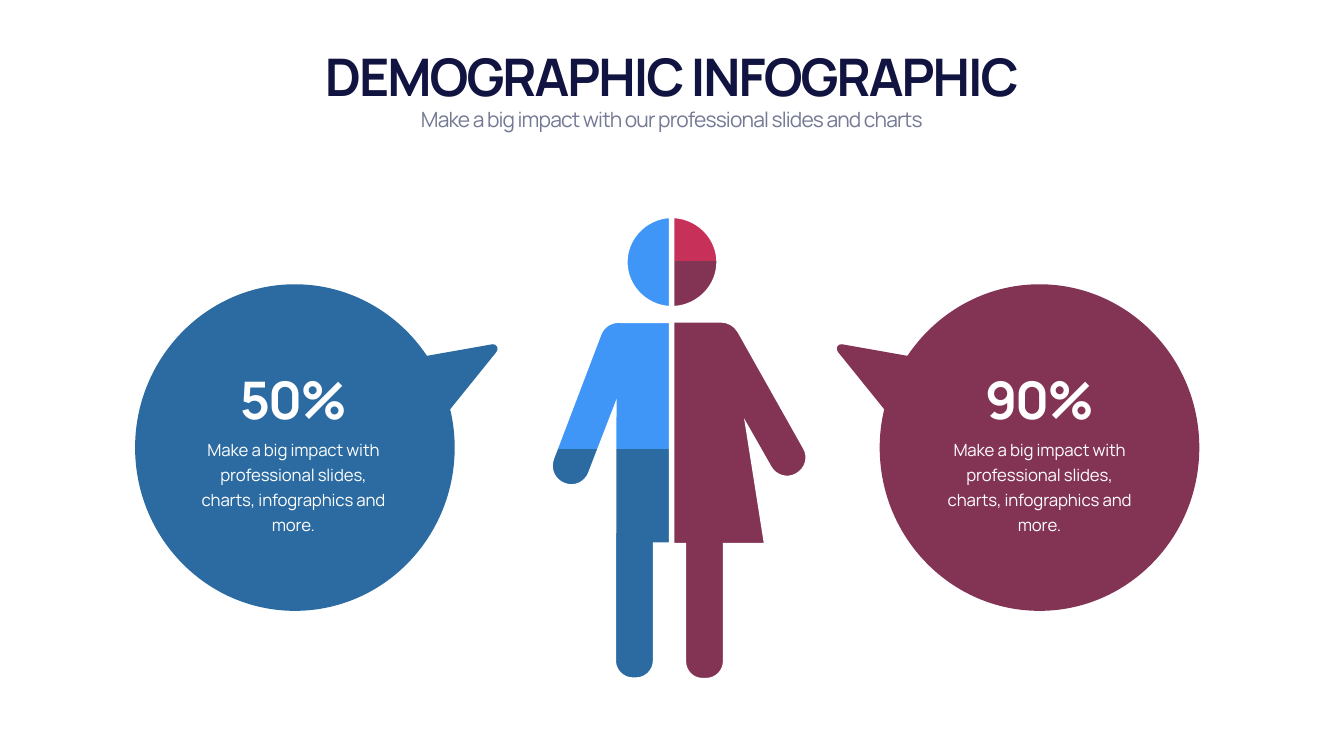
"""Build the demographic infographic slide: two speech bubbles around a split figure."""
from lxml import etree
from pptx import Presentation
from pptx.chart.data import CategoryChartData
from pptx.dml.color import RGBColor
from pptx.enum.chart import XL_CHART_TYPE
from pptx.enum.text import MSO_ANCHOR, MSO_AUTO_SIZE, PP_ALIGN
from pptx.oxml.ns import qn
from pptx.util import Inches, Pt

STACKED = XL_CHART_TYPE.COLUMN_STACKED_100
TOP, BOTTOM = MSO_ANCHOR.TOP, MSO_ANCHOR.BOTTOM
GROW = MSO_AUTO_SIZE.SHAPE_TO_FIT_TEXT
CENTER = PP_ALIGN.CENTER

FONT = "Manrope"
COLORS = {
    "navy": "111340", "gray": "747994", "white": "FFFFFF", "blue": "2B6BA1",
    "sky": "3F96F7", "plum": "833455", "red": "C73059",
}

TITLE = "DEMOGRAPHIC INFOGRAPHIC"
SUBTITLE = "Make a big impact with our professional slides and charts"
BUBBLE_TEXT = "Make a big impact with professional slides, charts, infographics and more."
GROUPS = [
    {"share": 50, "colors": ("blue", "sky"), "bubble_left": 2.68, "mirrored": True,
     "text_left": 3.78, "chart_left": 10.91, "chart_width": 2.42},
    {"share": 90, "colors": ("plum", "red"), "bubble_left": 16.57, "mirrored": False,
     "text_left": 18.58, "chart_left": 13.33, "chart_width": 2.7},
]
CHART_TOP, CHART_HEIGHT = 4.25, 9.3
BUBBLE_TOP, BUBBLE_WIDTH = 5.64, 7.22

BUBBLE = [
    (4.05, 0), (2.96, 0, 2, 0.57, 1.43, 1.42), (0.13, 1.19),
    (0.05, 1.18, 0, 1.27, 0.05, 1.34), (0.97, 2.48),
    (0.91, 2.73, 0.88, 2.98, 0.88, 3.24), (0.88, 5.03, 2.3, 6.48, 4.05, 6.48),
    (5.8, 6.48, 7.22, 5.03, 7.22, 3.24), (7.22, 1.46, 5.8, 0, 4.05, 0),
]
MAN_BODY = [
    (12.34, 6.41), (12.33, 6.41, 12.33, 6.41, 12.32, 6.41),
    (12.15, 6.39, 11.99, 6.48, 11.93, 6.64), (10.99, 9.11),
    (10.92, 9.3, 11.01, 9.51, 11.2, 9.58), (11.39, 9.66, 11.6, 9.56, 11.67, 9.37),
    (12.23, 7.92), (12.23, 9.65, 12.22, 11.38, 12.22, 13.11),
    (12.22, 13.29, 12.37, 13.44, 12.55, 13.44), (12.62, 13.44),
    (12.8, 13.44, 12.95, 13.29, 12.95, 13.11), (12.95, 10.76), (13.27, 10.76),
    (13.27, 9.31, 13.27, 7.86, 13.27, 6.41),
]
WOMAN_BODY = [
    (13.38, 6.4), (13.38, 10.77), (13.48, 10.77), (13.61, 10.77), (13.61, 13.12),
    (13.61, 13.3, 13.75, 13.45, 13.93, 13.45), (14.01, 13.45),
    (14.19, 13.45, 14.34, 13.3, 14.34, 13.12), (14.34, 10.77), (15.15, 10.77),
    (14.76, 8.3), (15.3, 9.25), (15.4, 9.43, 15.62, 9.49, 15.79, 9.39),
    (15.97, 9.29, 16.03, 9.07, 15.93, 8.9), (14.63, 6.59),
    (14.56, 6.47, 14.43, 6.4, 14.3, 6.4), (13.48, 6.4),
]
MAN_HEAD = [
    (13.27, 4.33), (12.82, 4.36, 12.45, 4.74, 12.45, 5.2),
    (12.45, 5.66, 12.82, 6.04, 13.27, 6.07),
]
WOMAN_HEAD = [
    (13.38, 4.33), (13.38, 6.07), (13.84, 6.04, 14.21, 5.66, 14.21, 5.2),
    (14.21, 4.74, 13.84, 4.36, 13.38, 4.33),
]
FRAME = [(10.83, 4.15), (16.16, 4.15), (16.16, 13.55), (10.83, 13.55)]


def rgb(name):
    return RGBColor.from_string(COLORS[name])


def point_pairs(segment):
    return list(zip(segment[::2], segment[1::2]))


def curve_segments(outline, segments, left, top):
    lines = list(outline._element.iter(qn("a:lnTo")))
    for line, segment in zip(lines, segments):
        if len(segment) == 1:
            continue
        curve = etree.Element(qn("a:cubicBezTo"))
        for x, y in segment:
            point = etree.SubElement(curve, qn("a:pt"))
            point.set("x", str(x - left))
            point.set("y", str(y - top))
        line.getparent().replace(line, curve)


def add_outline(slide, contours, color):
    scaled = [[[(Inches(x), Inches(y)) for x, y in point_pairs(segment)]
               for segment in contour] for contour in contours]
    builder = slide.shapes.build_freeform(*scaled[0][0][0], scale=1.0)
    for index, contour in enumerate(scaled):
        if index:
            builder.move_to(*contour[0][0])
        builder.add_line_segments([segment[-1] for segment in contour[1:]], close=True)
    outline = builder.convert_to_shape()
    segments = [segment for contour in scaled for segment in contour[1:]]
    curve_segments(outline, segments, outline.left, outline.top)
    outline.shadow.inherit = False
    outline.fill.solid()
    outline.fill.fore_color.rgb = rgb(color)
    outline.line.fill.background()


def add_bubble(slide, group):
    def place(segment):
        placed = []
        for x, y in point_pairs(segment):
            offset = BUBBLE_WIDTH - x if group["mirrored"] else x
            placed += [group["bubble_left"] + offset, BUBBLE_TOP + y]
        return placed

    add_outline(slide, [[place(segment) for segment in BUBBLE]], group["colors"][0])


def write(box, text, bounds, size, color, spacing, bold=False, anchor=TOP, leading=None):
    box.left, box.top, box.width, box.height = map(Inches, bounds)
    frame = box.text_frame
    frame.text = text
    frame.word_wrap = True
    frame.auto_size = GROW
    frame.vertical_anchor = anchor
    paragraph = frame.paragraphs[0]
    paragraph.alignment = CENTER
    paragraph.space_before = Pt(0)
    if leading:
        paragraph.line_spacing = Pt(leading)
    run = paragraph.runs[0]
    run.font.name = FONT
    run.font.size = Pt(size)
    run.font.bold = bold
    run.font.color.rgb = rgb(color)
    run._r.get_or_add_rPr().set("spc", str(round(spacing * 100)))


def add_label(slide, text, bounds, **style):
    box = slide.shapes.add_textbox(*map(Inches, bounds))
    write(box, text, bounds, color="white", **style)


def fill_plot(chart):
    plot_area = chart._chartSpace.chart.plotArea
    for old in plot_area.findall(qn("c:layout")):
        plot_area.remove(old)
    layout = etree.Element(qn("c:layout"))
    manual = etree.SubElement(layout, qn("c:manualLayout"))
    for tag, value in (("layoutTarget", "inner"), ("xMode", "edge"), ("yMode", "edge"),
                       ("x", "0"), ("y", "0"), ("w", "1"), ("h", "1")):
        etree.SubElement(manual, qn(f"c:{tag}")).set("val", value)
    plot_area.insert(0, layout)


def add_share_chart(slide, group):
    shares = CategoryChartData()
    shares.categories = ["1"]
    shares.add_series("Series 1", [group["share"]])
    shares.add_series("Series 2", [100 - group["share"]])
    bounds = (group["chart_left"], CHART_TOP, group["chart_width"], CHART_HEIGHT)
    chart = slide.shapes.add_chart(STACKED, *map(Inches, bounds), shares).chart
    chart.has_legend = chart.has_title = False
    chart.font.name = FONT
    chart.font.size = Pt(34)
    chart.font.bold = True
    chart.font.color.rgb = rgb("white")
    chart.category_axis.visible = False
    axis = chart.value_axis
    axis.visible = axis.has_major_gridlines = False
    axis.minimum_scale, axis.maximum_scale = 0, 1
    axis.tick_labels.number_format = "0%"
    axis.tick_labels.number_format_is_linked = False
    plot = chart.plots[0]
    plot.gap_width, plot.overlap = 0, 100
    plot.vary_by_categories = False
    for series, color in zip(plot.series, group["colors"]):
        series.format.fill.solid()
        series.format.fill.fore_color.rgb = rgb(color)
    fill_plot(chart)


def main():
    deck = Presentation()
    deck.slide_width, deck.slide_height = Inches(26.66), Inches(15)
    slide = deck.slides.add_slide(deck.slide_layouts[0])
    write(slide.shapes.title, TITLE, (1.66, 0.82, 23.33, 1.35), 74, "navy", -2.9,
          bold=True, anchor=BOTTOM)
    write(slide.placeholders[1], SUBTITLE, (1.66, 2.07, 23.33, 0.61), 30, "gray", -1.2)
    for group in GROUPS:
        add_bubble(slide, group)
        left = group["text_left"]
        add_label(slide, BUBBLE_TEXT, (left, 8.57, 4.08, 2.1), size=24, spacing=-0.2,
                  leading=36)
        add_label(slide, f"{group['share']}%", (left, 7.22, 4.08, 1.35), size=74,
                  spacing=-2.9, bold=True, anchor=BOTTOM)
        add_share_chart(slide, group)
    add_outline(slide, [MAN_BODY, WOMAN_BODY, MAN_HEAD, WOMAN_HEAD, FRAME], "white")
    deck.save("out.pptx")


if __name__ == "__main__":
    main()
